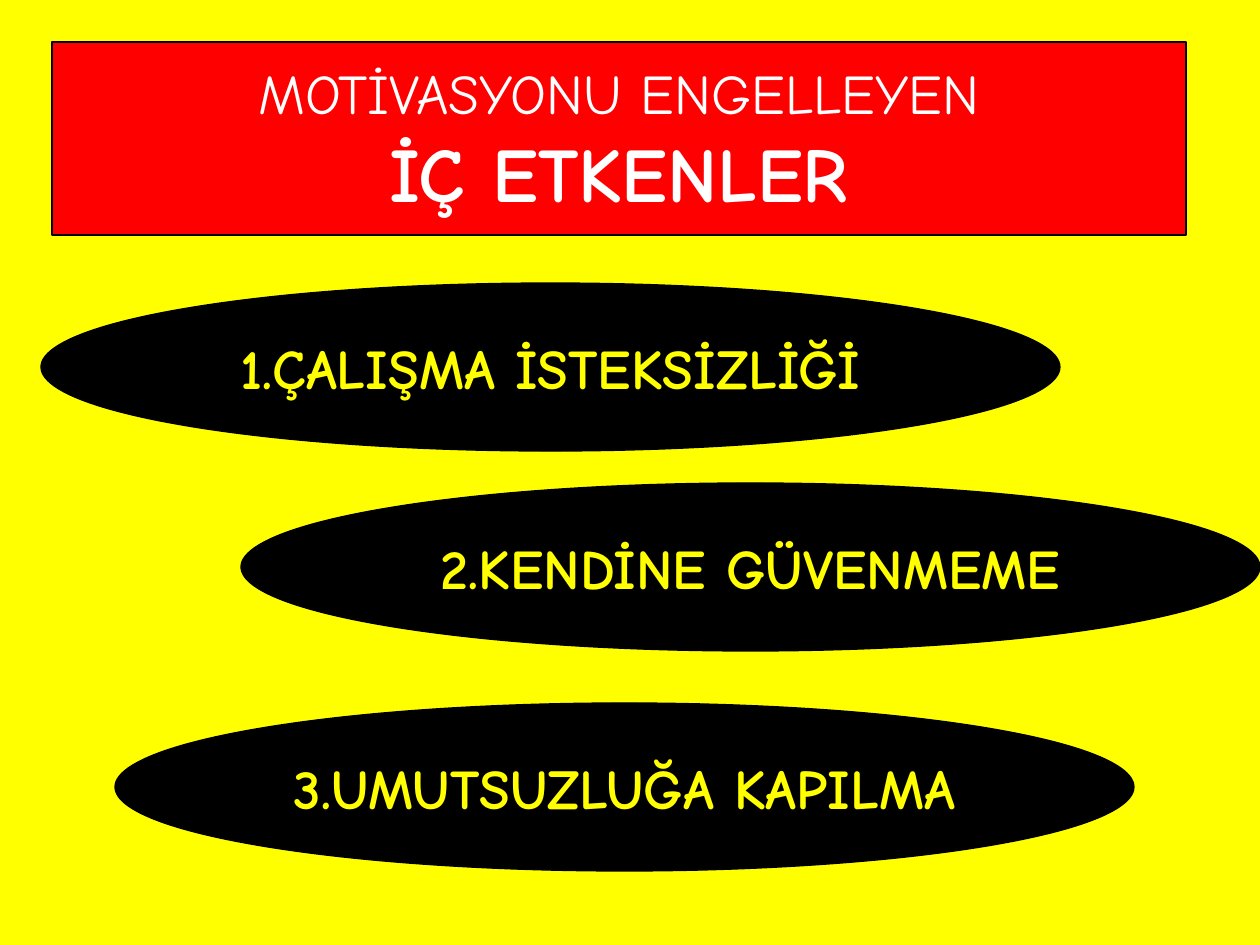
from pptx import Presentation
from pptx.dml.color import RGBColor
from pptx.enum.shapes import MSO_SHAPE as Shape
from pptx.enum.text import MSO_ANCHOR as Anchor, MSO_AUTO_SIZE as AutoSize, PP_ALIGN as Align
from pptx.util import Emu, Pt

EMU_PER_PX = 914400 // 126
YELLOW, RED, BLACK, WHITE = "FFFF00", "FF0000", "000000", "FFFFFF"


def px(length):
    return Emu(length * EMU_PER_PX)


def color(hex_value):
    return RGBColor.from_string(hex_value)


class SlideBuilder:
    font_name = "Comic Neue"

    def __init__(self, presentation):
        self.slide = presentation.slides.add_slide(presentation.slide_layouts[5])

    def background(self, hex_value):
        fill = self.slide.background.fill
        fill.solid()
        fill.fore_color.rgb = color(hex_value)

    def paint(self, shape, fill):
        shape.fill.solid()
        shape.fill.fore_color.rgb = color(fill)
        shape.line.color.rgb = color(BLACK)
        shape.line.width = Pt(0.75)

    def format_frame(self, shape, wrap):
        values = {"word_wrap": wrap, "auto_size": AutoSize.NONE,
                  "vertical_anchor": Anchor.MIDDLE}
        for name, value in values.items():
            setattr(shape.text_frame, name, value)
        paragraph = shape.text_frame.paragraphs[0]
        paragraph.alignment = Align.CENTER
        return paragraph

    def add_run(self, paragraph, text, size, bold, hex_value):
        run = paragraph.add_run()
        run.text = text
        values = {"name": self.font_name, "size": Pt(size), "bold": bold}
        for name, value in values.items():
            setattr(run.font, name, value)
        run.font.color.rgb = color(hex_value)

    def title(self, left, top, width, height, lines):
        shape = self.slide.shapes.title
        box = {"left": left, "top": top, "width": width, "height": height}
        for name, value in box.items():
            setattr(shape, name, px(value))
        self.paint(shape, RED)
        paragraph = self.format_frame(shape, wrap=True)
        for index, (text, size, bold) in enumerate(lines):
            if index:
                paragraph.add_line_break()
            self.add_run(paragraph, text, size, bold, WHITE)

    def ellipse(self, left, top, width, height, text):
        shape = self.slide.shapes.add_shape(
            Shape.OVAL, px(left), px(top), px(width), px(height))
        shape.shadow.inherit = False
        self.paint(shape, BLACK)
        paragraph = self.format_frame(shape, wrap=False)
        self.add_run(paragraph, text, 32, True, YELLOW)


def main():
    presentation = Presentation()
    presentation.slide_width, presentation.slide_height = px(1260), px(945)
    builder = SlideBuilder(presentation)
    builder.background(YELLOW)

    # Title banner
    builder.title(52, 42, 1134, 193, [
        ("MOTİVASYONU ENGELLEYEN", 32, False),
        ("İÇ ETKENLER", 44, True),
    ])

    # Internal factors
    factors = [
        (41, 283, "1.ÇALIŞMA İSTEKSİZLİĞİ"),
        (241, 483, "2.KENDİNE GÜVENMEME"),
        (115, 703, "3.UMUTSUZLUĞA KAPILMA"),
    ]
    for left, top, text in factors:
        builder.ellipse(left, top, 1019, 168, text)

    presentation.save("out.pptx")


if __name__ == "__main__":
    main()
